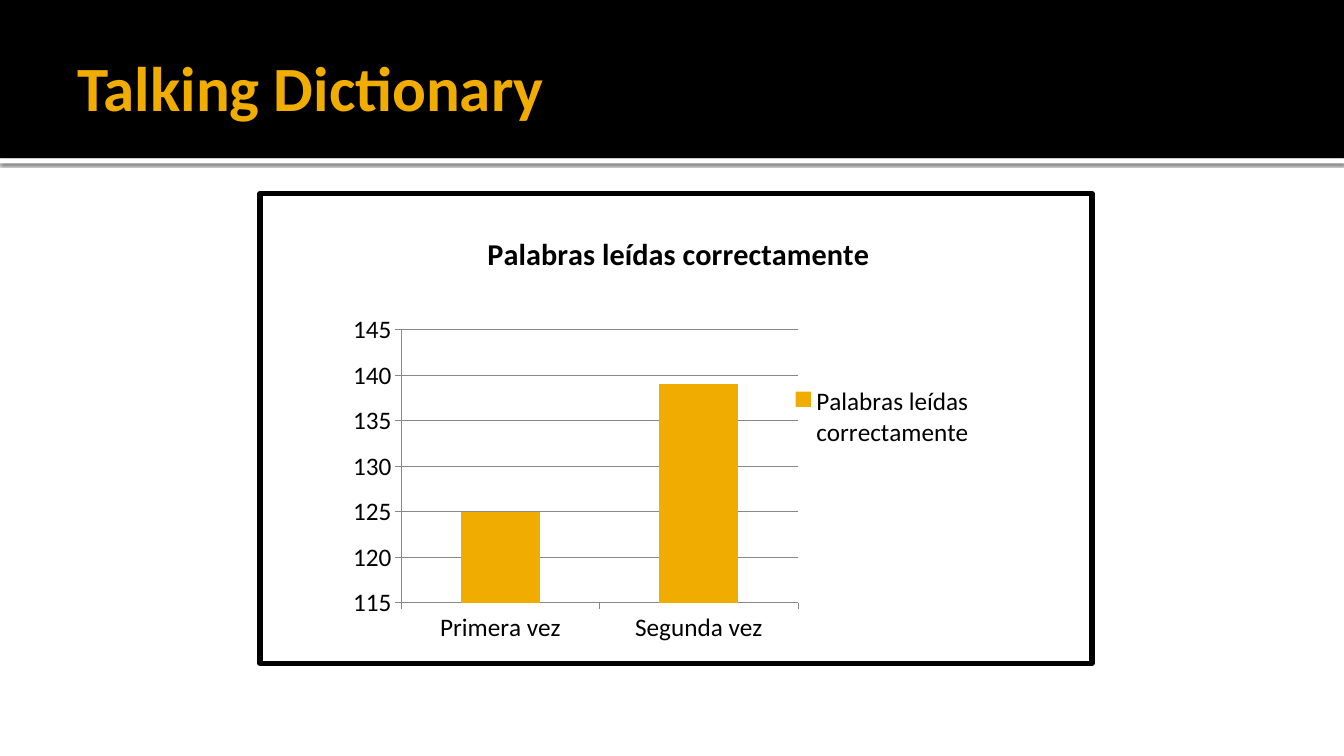
from lxml import etree
from pptx import Presentation
from pptx.chart.data import CategoryChartData
from pptx.dml.color import RGBColor
from pptx.enum.chart import XL_CHART_TYPE, XL_LEGEND_POSITION, XL_TICK_MARK
from pptx.enum.shapes import MSO_SHAPE
from pptx.enum.text import MSO_ANCHOR
from pptx.oxml import parse_xml
from pptx.oxml.ns import qn
from pptx.util import Inches, Pt

RECTANGLE = MSO_SHAPE.RECTANGLE
COLUMNS = XL_CHART_TYPE.COLUMN_CLUSTERED
LEGEND_RIGHT = XL_LEGEND_POSITION.RIGHT
TICK_OUTSIDE = XL_TICK_MARK.OUTSIDE
MIDDLE = MSO_ANCHOR.MIDDLE

TITLE = "Talking Dictionary"
SERIES = "Palabras leídas correctamente"
READINGS = {"Primera vez": 125, "Segunda vez": 139}

FONT = "Calibri"
BLACK, WHITE, GOLD, GRAY = "000000", "FFFFFF", "F0AD00", "878787"
WIDTH, HEIGHT = 13.33, 7.5
BANNER_HEIGHT = 1.57
TITLE_BOX = (0.67, 0.17, 12, 1.37)
FRAME_BOX = (2.58, 1.92, 8.25, 4.66)
CHART_BOX = (3.38, 2.03, 6.67, 4.44)
# Shares of the chart's size: left, top, width, height
PLOT_SHARES = (0.09, 0.28, 0.59, 0.61)
LEGEND_SHARES = (0.66, 0.39, 0.29, 0.17)
TITLE_SHARES = (0.21, 0.05)

SHADOW = """<a:effectLst xmlns:a="http://schemas.openxmlformats.org/drawingml/2006/main">
<a:outerShdw blurRad="31750" dist="10160" dir="5400000" rotWithShape="0">
<a:srgbClr val="000000"><a:alpha val="60000"/></a:srgbClr></a:outerShdw></a:effectLst>"""


def color(value):
    return RGBColor.from_string(value)


def inches(box):
    return [Inches(length) for length in box]


def set_font(font, size, value, bold=False):
    font.name, font.size, font.bold = FONT, Pt(size), bold
    font.color.rgb = color(value)


def add_rectangle(slide, box, fill=None, line=None):
    shape = slide.shapes.add_shape(RECTANGLE, *inches(box))
    shape.shadow.inherit = False
    if fill:
        shape.fill.solid()
        shape.fill.fore_color.rgb = color(fill)
    else:
        shape.fill.background()
    if line:
        shape.line.color.rgb = color(line)
        shape.line.width = Pt(3.78)
    else:
        shape.line.fill.background()
    return shape


def place(part, index, shares, inner=False):
    """Give a chart part a manual layout, as child number index."""
    for old in part.findall(qn("c:layout")):
        part.remove(old)
    layout = part.makeelement(qn("c:layout"), {})
    part.insert(index, layout)
    manual = etree.SubElement(layout, qn("c:manualLayout"))
    settings = [("layoutTarget", "inner")] if inner else []
    settings += [("xMode", "edge"), ("yMode", "edge"), *zip("xywh", shares)]
    for name, value in settings:
        etree.SubElement(manual, qn("c:" + name)).set("val", str(value))


def add_banner(slide):
    edge = add_rectangle(slide, (0, BANNER_HEIGHT, WIDTH, 0.05), WHITE)
    properties = edge.fill._xPr
    properties.remove(properties.find(qn("a:effectLst")))
    properties.append(parse_xml(SHADOW))
    add_rectangle(slide, (0, 0, WIDTH, BANNER_HEIGHT), BLACK)

    frame = slide.shapes.add_textbox(*inches(TITLE_BOX)).text_frame
    frame.word_wrap = True
    frame.vertical_anchor = MIDDLE
    frame.margin_left = Inches(0.1)
    frame.margin_right = frame.margin_top = frame.margin_bottom = Inches(0.05)
    frame.text = TITLE
    set_font(frame.paragraphs[0].font, 45, GOLD, True)


def add_readings_chart(slide):
    data = CategoryChartData()
    data.categories = list(READINGS)
    data.add_series(SERIES, list(READINGS.values()))
    chart = slide.shapes.add_chart(COLUMNS, *inches(CHART_BOX), data).chart
    set_font(chart.font, 18, BLACK)

    title = chart.chart_title
    title.text_frame.text = SERIES
    set_font(title.text_frame.paragraphs[0].font, 21.6, BLACK, True)
    place(title._element, 1, TITLE_SHARES)

    chart.has_legend = True
    chart.legend.position = LEGEND_RIGHT
    chart.legend.include_in_layout = False
    place(chart.legend._element, 1, LEGEND_SHARES)

    plot = chart.plots[0]
    plot.gap_width = 150
    plot.vary_by_categories = False
    bars = plot.series[0].format.fill
    bars.solid()
    bars.fore_color.rgb = color(GOLD)
    place(chart._chartSpace.chart.plotArea, 0, PLOT_SHARES, inner=True)

    values = chart.value_axis
    values.minimum_scale, values.maximum_scale, values.major_unit = 115, 145, 5
    values.has_major_gridlines = True
    for axis in (values, chart.category_axis):
        axis.major_tick_mark = TICK_OUTSIDE
        axis.format.line.color.rgb = color(GRAY)
    values.major_gridlines.format.line.color.rgb = color(GRAY)


def main():
    presentation = Presentation()
    presentation.slide_width, presentation.slide_height = inches((WIDTH, HEIGHT))
    slide = presentation.slides.add_slide(presentation.slide_layouts[6])
    add_banner(slide)
    add_rectangle(slide, FRAME_BOX, line=BLACK)
    add_readings_chart(slide)
    presentation.save("out.pptx")


if __name__ == "__main__":
    main()
